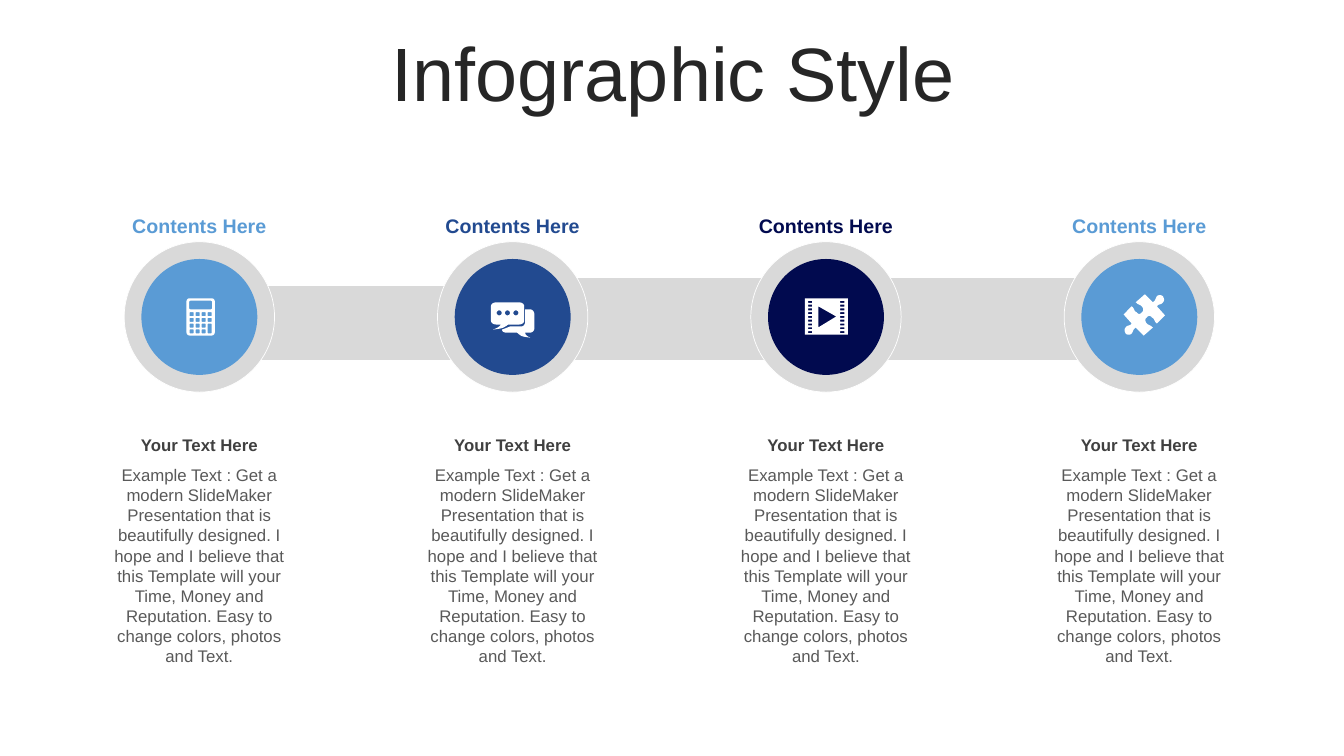
"""Build a four-step infographic slide with linked icon circles."""
from math import cos, pi, sin

from pptx import Presentation
from pptx.dml.color import RGBColor
from pptx.enum.shapes import MSO_SHAPE as SHAPE
from pptx.enum.text import MSO_ANCHOR as ANCHOR, PP_ALIGN as ALIGN
from pptx.util import Pt

SKY = RGBColor(0x5A, 0x9B, 0xD5)
BLUE = RGBColor(0x22, 0x4A, 0x90)
NAVY = RGBColor(0x01, 0x0A, 0x4F)
GREY = RGBColor(0xD9, 0xD9, 0xD9)
WHITE = RGBColor(0xFF, 0xFF, 0xFF)
TITLE_INK = RGBColor(0x26, 0x26, 0x26)
HEADING_INK = RGBColor(0x40, 0x40, 0x40)
BODY_INK = RGBColor(0x59, 0x59, 0x59)

TITLE = "Infographic Style"
HEADING = "Your Text Here"
BODY = ("Example Text : Get a modern SlideMaker Presentation that is "
        "beautifully designed. I hope and I believe that this Template will "
        "your Time, Money and Reputation. Easy to change colors, photos and Text.")
STEPS = [("Contents Here", SKY, "calculator"), ("Contents Here", BLUE, "chat"),
         ("Contents Here", NAVY, "film"), ("Contents Here", SKY, "puzzle")]
BARS = [(366.5, 198, 195, 59.8), (553, 198, 262, 59.8), (142.6, 203.8, 239.8, 53.6)]

FIRST_X, PITCH, CIRCLE_Y = 142.4, 223.8, 226.4
RING, DISC = 107.4, 82.8

FRONT_BUBBLE = [
    (-11.9, -10.4), (4.7, -10.4), (6.8, -10.4, 8.3, -9, 8.3, -7.6), (8.3, 2.5),
    (8.3, 4, 6.8, 5.4, 4.7, 5.4), (-3.2, 5.4), (-6.8, 8.3, -8.3, 8.3, -14, 9),
    (-10.4, 7.6, -10.4, 7.6, -8.3, 5.4), (-11.9, 5.4),
    (-14, 5.4, -15.5, 4, -15.5, 2.5), (-15.5, -7.6),
    (-15.5, -9, -14, -10.4, -11.9, -10.4)]
BACK_BUBBLE = [
    (9, -5.4), (12.6, -5.4), (14, -5.4, 15.5, -4, 15.5, -1.8), (15.5, 8.3),
    (15.5, 9.7, 14, 11.2, 12.6, 11.2), (9, 11.2), (9, 11.9, 9, 13.3, 12.6, 14.8),
    (6.8, 14, 6.1, 14, 3.2, 11.2), (-4.7, 11.2), (-6.1, 11.2, -7.6, 10.4, -7.6, 9),
    (-5.4, 8.3, -4, 7.6, -1.8, 6.8), (6.1, 6.8), (7.6, 6.8, 9, 5.4, 9, 3.2)]
PUZZLE_HALF = [
    (16.9, -14.8), (17.6, -13.3, 18.4, -11.9, 16.9, -10.4),
    (15.5, -8.3, 14, -9.7, 12.6, -7.6), (18.4, -1.1), (12.6, 4.7),
    (10.4, 3.2, 11.2, 1.1, 9, 0.4), (8.3, -1.1, 6.1, -1.1, 5.4, 0.4),
    (4, 1.1, 4, 3.2, 5.4, 4.7), (6.8, 6.1, 7.6, 5.4, 9.7, 7.6), (3.2, 13.3),
    (-2.5, 7.6), (-4.7, 9, -4, 9.7, -5.4, 11.9), (-6.8, 13.3, -9, 12.6, -9.7, 11.9)]


def flatten(segments, steps=8):
    points = [segments[0]]
    for segment in segments[1:]:
        if len(segment) == 2:
            points.append(segment)
            continue
        x0, y0 = points[-1]
        x1, y1, x2, y2, x3, y3 = segment
        for t in (n / steps for n in range(1, steps + 1)):
            a, b, c, d = (1 - t) ** 3, 3 * t * (1 - t) ** 2, 3 * t * t * (1 - t), t ** 3
            points.append((a * x0 + b * x1 + c * x2 + d * x3,
                           a * y0 + b * y1 + c * y2 + d * y3))
    return points


def box(left, top, width, height, radius=0):
    right, bottom = left + width, top + height
    if not radius:
        return [(left, top), (right, top), (right, bottom), (left, bottom)]
    corners = [(right - radius, bottom - radius), (left + radius, bottom - radius),
               (left + radius, top + radius), (right - radius, top + radius)]
    return [(x + radius * cos((quarter + n / 6) * pi / 2),
             y + radius * sin((quarter + n / 6) * pi / 2))
            for quarter, (x, y) in enumerate(corners) for n in range(7)]


def calculator():
    keys = [box(-7 + 4.3 * col, -3.4 + 4.1 * row, 2.9, 2.9, 0.5)
            for row in range(4) for col in range(4) if col < 3 or row < 2]
    tall_key = box(5.9, 4.8, 2.9, 7, 0.5)
    return [box(-9.2, -13.3, 20.2, 26.6, 2.2), box(-7.3, -11.6, 16.4, 6.2, 1),
            tall_key, *keys]


def chat():
    dots = [box(x - 1.8, -4.7, 3.6, 3.6, 1.8) for x in (-9.6, -3.7, 2.3)]
    return [flatten(FRONT_BUBBLE), flatten(BACK_BUBBLE), *dots]


def film():
    holes = [box(x, -11.5 + 2.7 * row, 2.9, 1.4) for x in (-12.8, 10.2) for row in range(9)]
    return [box(-15, -13.3, 30.6, 25.9), [(-5.5, -7.6), (-5.5, 7.5), (7.3, -0.3)], *holes]


def puzzle():
    half = flatten(PUZZLE_HALF)
    return [half + [(7.2 - x, -2.9 - y) for x, y in half]]


ICONS = {"calculator": calculator, "chat": chat, "film": film, "puzzle": puzzle}


def paint(part, fill, line=None):
    part.shadow.inherit = False
    part.fill.solid()
    part.fill.fore_color.rgb = fill
    if line is None:
        part.line.fill.background()
    else:
        part.line.color.rgb = line
        part.line.width = Pt(0.5)


def add_shape(slide, kind, left, top, width, height, fill, line=None):
    paint(slide.shapes.add_shape(kind, Pt(left), Pt(top), Pt(width), Pt(height)), fill, line)


def add_circle(slide, x, diameter, fill, line=None):
    add_shape(slide, SHAPE.OVAL, x - diameter / 2, CIRCLE_Y - diameter / 2,
              diameter, diameter, fill, line)


def add_icon(slide, x, contours):
    placed = [[(Pt(x + dx), Pt(CIRCLE_Y + dy)) for dx, dy in contour] for contour in contours]
    outline = slide.shapes.build_freeform(*placed[0][0])
    outline.add_line_segments(placed[0][1:])
    for contour in placed[1:]:
        outline.move_to(*contour[0])
        outline.add_line_segments(contour[1:])
    paint(outline.convert_to_shape(), WHITE)


def add_text(slide, text, x, top, width, height, size, color,
             bold=False, anchor=ANCHOR.TOP, spacing=1.0):
    frame = slide.shapes.add_textbox(
        Pt(x - width / 2), Pt(top), Pt(width), Pt(height)).text_frame
    frame.word_wrap = True
    frame.vertical_anchor = anchor
    paragraph = frame.paragraphs[0]
    paragraph.alignment = ALIGN.CENTER
    paragraph.line_spacing = spacing
    run = paragraph.add_run()
    run.text = text
    run.font.name = "Arial"
    run.font.size = Pt(size)
    run.font.bold = bold
    run.font.color.rgb = color


def main():
    deck = Presentation()
    deck.slide_width, deck.slide_height = Pt(960), Pt(540)
    slide = deck.slides.add_slide(deck.slide_layouts[6])
    add_text(slide, TITLE, 481, 26.6, 911.5, 56.9, 54, TITLE_INK,
             anchor=ANCHOR.MIDDLE, spacing=0.9)
    for bar in BARS:
        add_shape(slide, SHAPE.RECTANGLE, *bar, GREY, WHITE)
    for index, (label, color, icon) in enumerate(STEPS):
        x = FIRST_X + PITCH * index
        add_text(slide, label, x, 149, 162.7, 24.5, 14, color, bold=True)
        add_circle(slide, x, RING, GREY, WHITE)
        add_circle(slide, x, DISC, color)
        add_icon(slide, x, ICONS[icon]())
        add_text(slide, HEADING, x, 306.7, 153.4, 21.6, 12, HEADING_INK, bold=True)
        add_text(slide, BODY, x, 328.3, 153.4, 152.6, 12, BODY_INK)
    deck.save("out.pptx")


if __name__ == "__main__":
    main()
